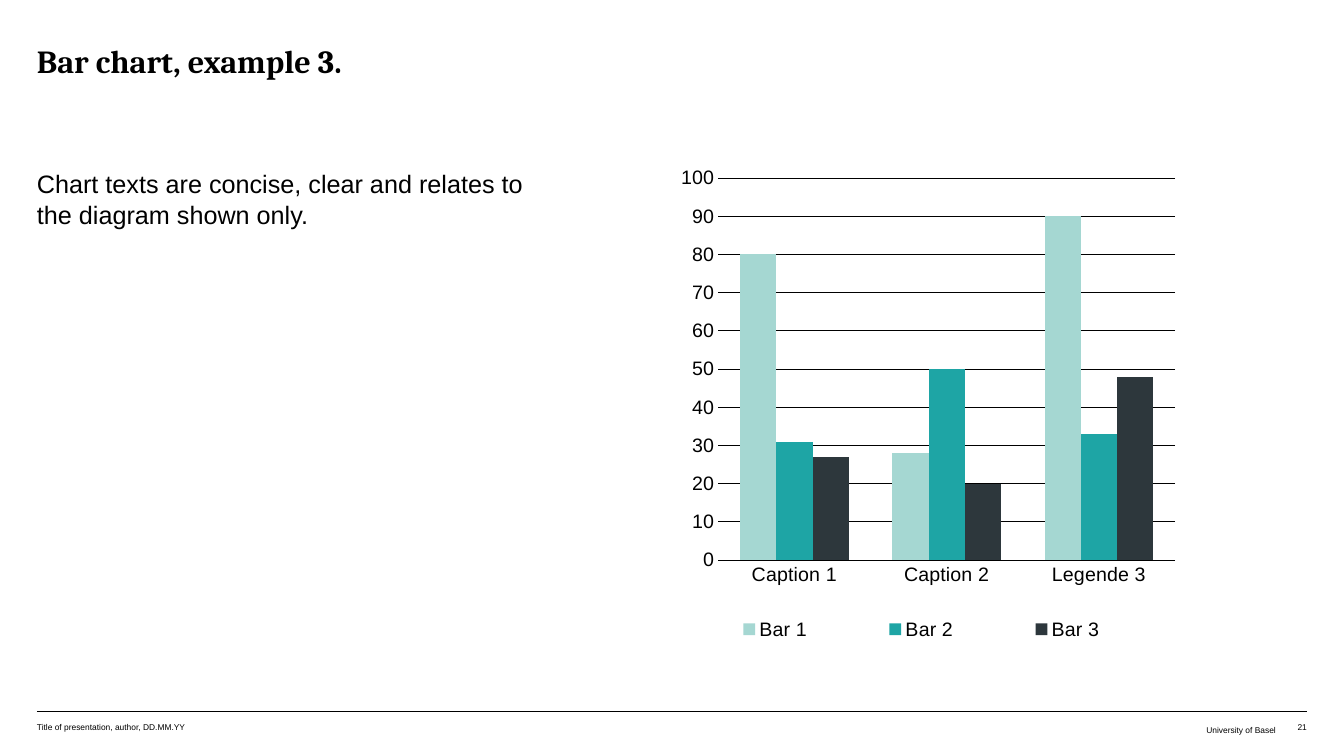
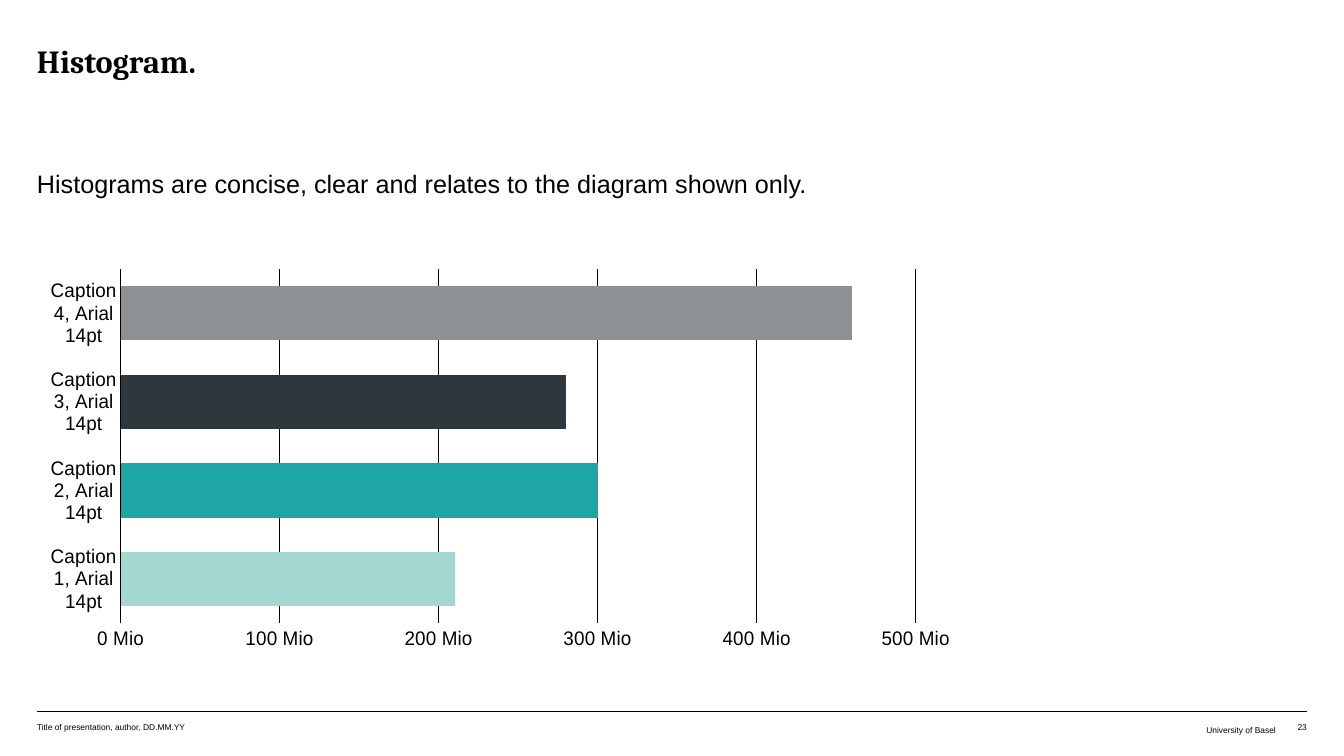
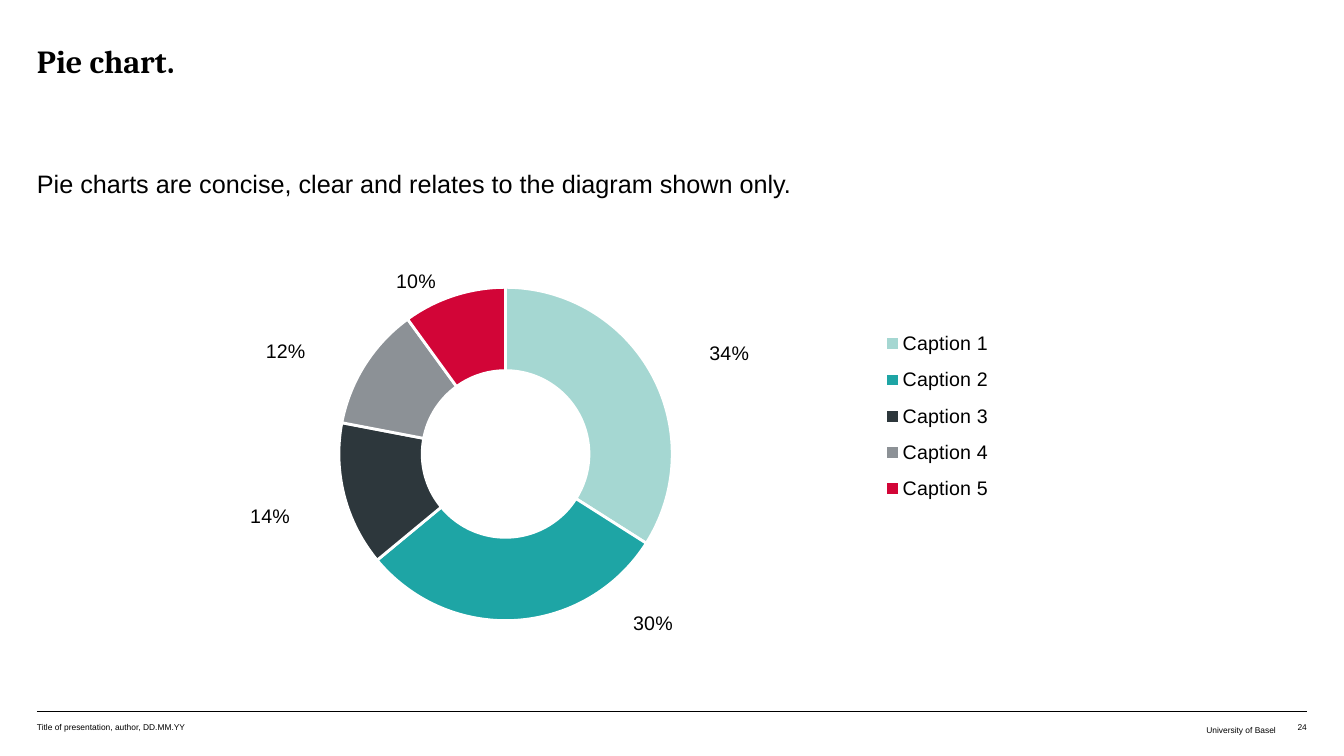
from dataclasses import dataclass
from typing import NamedTuple

from pptx import Presentation
from pptx.chart.data import CategoryChartData
from pptx.dml.color import RGBColor
from pptx.enum.chart import XL_CHART_TYPE as ChartType
from pptx.enum.chart import XL_LEGEND_POSITION as LegendPosition
from pptx.enum.chart import XL_TICK_MARK as TickMark
from pptx.enum.shapes import MSO_CONNECTOR as Connector
from pptx.enum.text import MSO_ANCHOR as Anchor
from pptx.enum.text import MSO_AUTO_SIZE as AutoSize
from pptx.enum.text import PP_ALIGN as Align
from pptx.oxml import parse_xml
from pptx.oxml.ns import nsdecls, qn
from pptx.util import Pt

COLORS = {
    "black": "000000",
    "white": "FFFFFF",
    "mint": "A5D7D2",
    "teal": "1EA5A5",
    "slate": "2D373C",
    "gray": "8C9196",
    "red": "D20537",
}
PALETTE = ["mint", "teal", "slate", "gray", "red"]
HEADING_FONT, BODY_FONT = "Cambria", "Arial"

LEFT, CONTENT_WIDTH = 26.4, 907.2
RIGHT = LEFT + CONTENT_WIDTH
LEAD_TOP = 119.7
RULE_TOP, FOOTER_TOP, FOOTER_HEIGHT = 508.3, 514.4, 14.4


class Box(NamedTuple):
    """Left, top, width and height: points on a slide, fractions in a chart."""
    left: float
    top: float
    width: float
    height: float

    def in_points(self) -> list:
        return [Pt(length) for length in self]


class FooterPart(NamedTuple):
    text: str
    box: Box
    align: Align
    margins: tuple


@dataclass
class Page:
    title: str
    number: int
    lead: str
    lead_box: Box


def rgb(color: str) -> RGBColor:
    return RGBColor.from_string(COLORS[color])


def style_font(font, size: float, name: str = BODY_FONT, bold: bool = False) -> None:
    font.size, font.name, font.bold = Pt(size), name, bold
    font.color.rgb = rgb("black")


def write(shape, text: str, *, size: float, font: str = BODY_FONT, bold: bool = False,
          align: Align = Align.LEFT, leading: float = 0, margins: tuple = (0, 0, 0, 0)) -> None:
    frame = shape.text_frame
    frame.word_wrap = True
    frame.auto_size = AutoSize.NONE
    frame.vertical_anchor = Anchor.TOP
    (frame.margin_left, frame.margin_top,
     frame.margin_right, frame.margin_bottom) = [Pt(margin) for margin in margins]
    frame.text = text
    paragraph = frame.paragraphs[0]
    paragraph.alignment = align
    if leading:
        paragraph.line_spacing = Pt(leading)
    style_font(paragraph.runs[0].font, size, font, bold)


def add_rule(slide) -> None:
    rule = slide.shapes.add_connector(
        Connector.STRAIGHT, Pt(LEFT), Pt(RULE_TOP), Pt(RIGHT), Pt(RULE_TOP))
    rule.line.color.rgb = rgb("black")
    rule.line.width = Pt(0.25)
    rule._element.spPr.append(parse_xml(f"<a:effectLst {nsdecls('a')}/>"))


def add_page(deck, page: Page):
    """Add a slide with the title, rule, footer and lead text all pages share."""
    slide = deck.slides.add_slide(deck.slide_layouts[5])
    add_rule(slide)
    title = slide.shapes.title
    title.left, title.top, title.width, title.height = Box(
        LEFT, 32.2, CONTENT_WIDTH, 59.8).in_points()
    write(title, page.title, size=23, font=HEADING_FONT, bold=True, leading=25)
    flush = (0, 1.4, 0, 0)
    footer = [
        FooterPart("Title of presentation, author, DD.MM.YY",
                   Box(LEFT, FOOTER_TOP, 226.8, FOOTER_HEIGHT), Align.LEFT, flush),
        FooterPart("University of Basel",
                   Box(718.2, FOOTER_TOP, 200.2, FOOTER_HEIGHT), Align.RIGHT, (7.2, 3.6, 7.2, 3.6)),
        FooterPart(str(page.number),
                   Box(918.4, FOOTER_TOP, 15.1, FOOTER_HEIGHT), Align.RIGHT, flush),
    ]
    for part in footer:
        write(slide.shapes.add_textbox(*part.box.in_points()), part.text,
              size=6, align=part.align, margins=part.margins)
    write(slide.shapes.add_textbox(*page.lead_box.in_points()), page.lead, size=18, leading=22)
    return slide


def set_layout(element, position: int, inner: bool = False, edge: bool = True, **lengths: float) -> None:
    """Give a chart part a manual layout, as the child at the given position."""
    for old in element.findall(qn("c:layout")):
        element.remove(old)
    target = '<c:layoutTarget val="inner"/>' if inner else ""
    modes = '<c:xMode val="edge"/><c:yMode val="edge"/>' if edge else ""
    values = "".join(f'<c:{name} val="{value}"/>' for name, value in lengths.items())
    element.insert(position, parse_xml(
        f"<c:layout {nsdecls('c')}><c:manualLayout>{target}{modes}{values}"
        "</c:manualLayout></c:layout>"))


def add_chart(slide, kind: ChartType, box: Box, plot_box: Box, categories: list,
              series: dict, number_format: str = "General"):
    data = CategoryChartData(number_format=number_format)
    data.categories = categories
    for name, values in series.items():
        data.add_series(name, values)
    chart = slide.shapes.add_chart(kind, *box.in_points(), data).chart
    chart.has_title = False
    chart.has_legend = False
    style_font(chart.font, 14)
    plot_area = chart._chartSpace.find(".//" + qn("c:plotArea"))
    set_layout(plot_area, 0, inner=True, x=plot_box.left, y=plot_box.top,
               w=plot_box.width, h=plot_box.height)
    return chart


def add_legend(chart, position: LegendPosition, box: Box) -> None:
    chart.has_legend = True
    legend = chart.legend
    legend.position = position
    legend.include_in_layout = False
    style_font(legend.font, 14)
    set_layout(legend._element, 1, x=box.left, y=box.top, w=box.width, h=box.height)


def style_bars(chart, gap: int, maximum: float, step: float) -> None:
    plot = chart.plots[0]
    plot.gap_width, plot.overlap = gap, 0
    plot.vary_by_categories = False
    for series, color in zip(plot.series, PALETTE):
        series.invert_if_negative = False
        fill_solid(series, color)
    values, captions = chart.value_axis, chart.category_axis
    values.minimum_scale, values.maximum_scale, values.major_unit = 0, maximum, step
    values.has_major_gridlines = True
    for line in (values.major_gridlines.format.line, captions.format.line):
        line.color.rgb = rgb("black")
        line.width = Pt(0.5)
    values.format.line.fill.background()
    for axis in (values, captions):
        axis.major_tick_mark = axis.minor_tick_mark = TickMark.NONE


def fill_solid(part, color: str) -> None:
    part.format.fill.solid()
    part.format.fill.fore_color.rgb = rgb(color)


def build_bar_chart(deck) -> None:
    slide = add_page(deck, Page(
        "Bar chart, example 3.", 21,
        "Chart texts are concise, clear and relates to the diagram shown only.",
        Box(LEFT, LEAD_TOP, 374.4, 342.7)))
    chart = add_chart(
        slide, ChartType.COLUMN_CLUSTERED, Box(476.8, 119.3, 362.9, 342.2),
        Box(0.1, 0.02, 0.9, 0.8), ["Caption 1", "Caption 2", "Legende 3"],
        {"Bar 1": (80, 28, 90), "Bar 2": (31, 50, 33), "Bar 3": (27, 20, 48)})
    style_bars(chart, gap=120, maximum=100, step=10)
    add_legend(chart, LegendPosition.BOTTOM, Box(0, 0.93, 1, 0.07))


def build_histogram(deck) -> None:
    slide = add_page(deck, Page(
        "Histogram.", 23,
        "Histograms are concise, clear and relates to the diagram shown only.",
        Box(LEFT, LEAD_TOP, 657.4, 46.8)))
    chart = add_chart(
        slide, ChartType.BAR_CLUSTERED, Box(30, 186.2, 648.5, 294.5),
        Box(0.09, 0.02, 0.91, 0.86), [f"Caption {n}, Arial 14pt" for n in range(1, 5)],
        {"Series 1": (210, 300, 280, 460)})
    style_bars(chart, gap=63, maximum=500, step=100)
    labels = chart.value_axis.tick_labels
    labels.number_format = '#0\\ "Mio"'
    labels.number_format_is_linked = False
    for index, color in enumerate(PALETTE[:4]):
        fill_solid(chart.plots[0].series[0].points[index], color)


def build_pie_chart(deck) -> None:
    slide = add_page(deck, Page(
        "Pie chart.", 24,
        "Pie charts are concise, clear and relates to the diagram shown only.",
        Box(LEFT, LEAD_TOP, 779.8, 46.8)))
    chart = add_chart(
        slide, ChartType.DOUGHNUT, Box(25.5, 173.5, CONTENT_WIDTH, 317.5),
        Box(0.14, 0.1, 0.46, 0.75), [f"Caption {n}" for n in range(1, 6)],
        {"Series 1": (0.34, 0.3, 0.14, 0.12, 0.1)}, number_format="0%")
    add_legend(chart, LegendPosition.RIGHT, Box(0.66, 0.17, 0.1, 0.44))
    plot = chart.plots[0]
    plot._element.find(qn("c:holeSize")).set("val", "60")
    ring = plot.series[0]
    label_offsets = [(0.09, -0.09), (0.11, 0.1), (-0.09, 0.07), (-0.09, -0.08), (-0.04, -0.12)]
    for index, (color, (x, y)) in enumerate(zip(PALETTE, label_offsets)):
        point = ring.points[index]
        fill_solid(point, color)
        point.format.line.color.rgb = rgb("white")
        point.format.line.width = Pt(2)
        style_font(point.data_label.font, 14)
        label = ring._element.findall(".//" + qn("c:dLbl"))[index]
        set_layout(label, 1, edge=False, x=x, y=y)
        label.insert(2, parse_xml(
            f'<c:numFmt {nsdecls("c")} formatCode="0%" sourceLinked="0"/>'))
    for leader_lines in ring._element.iter(qn("c:showLeaderLines")):
        leader_lines.set("val", "0")


def main() -> None:
    deck = Presentation()
    deck.slide_width, deck.slide_height = Pt(960), Pt(540)
    build_bar_chart(deck)
    build_histogram(deck)
    build_pie_chart(deck)
    deck.save("out.pptx")


if __name__ == "__main__":
    main()
